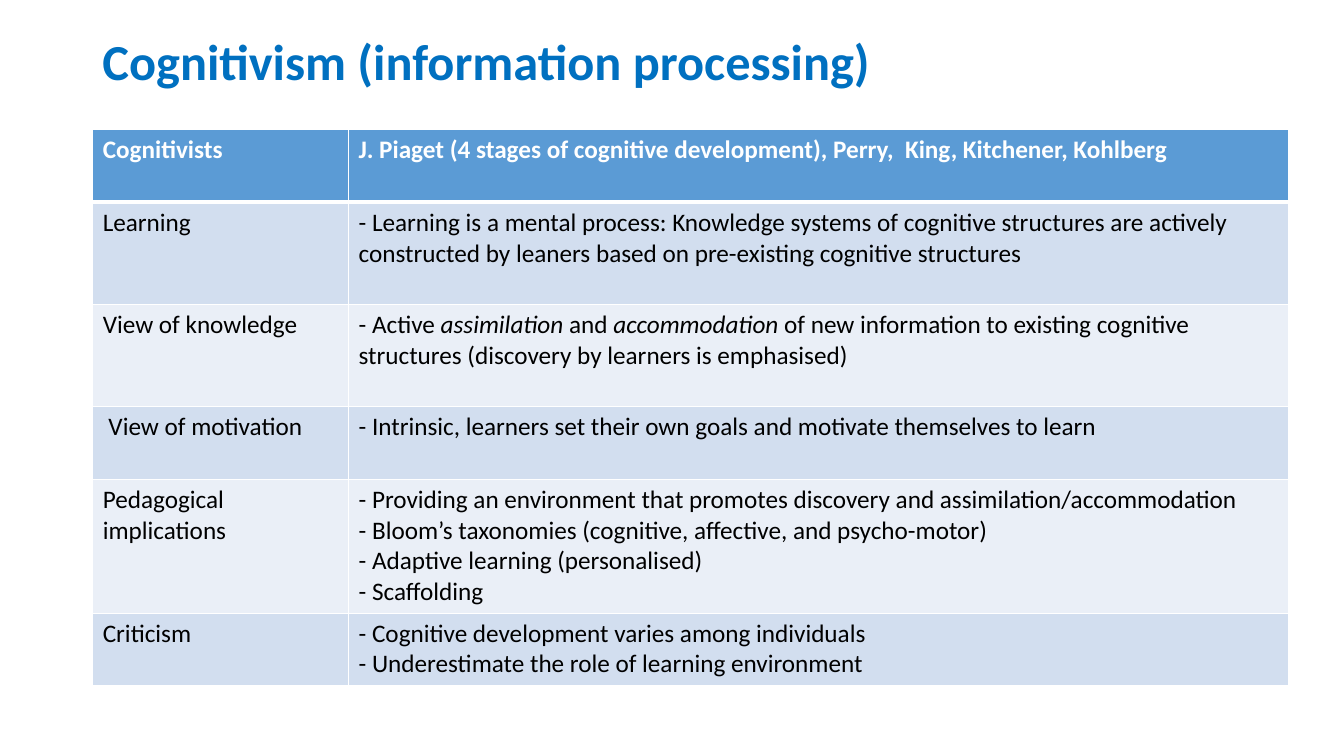
from lxml.etree import SubElement
from pptx import Presentation
from pptx.dml.color import RGBColor
from pptx.enum.text import MSO_ANCHOR as Anchor, PP_ALIGN as Align
from pptx.oxml.ns import qn
from pptx.util import Pt

TITLE_BLUE = RGBColor(0x00, 0x70, 0xC0)
HEADER_BLUE = RGBColor(0x5B, 0x9B, 0xD5)
BAND_DARK = RGBColor(0xD2, 0xDE, 0xEF)
BAND_LIGHT = RGBColor(0xEA, 0xEF, 0xF7)
WHITE = RGBColor(0xFF, 0xFF, 0xFF)
BLACK = RGBColor(0x00, 0x00, 0x00)
FONT = "Calibri"

COLUMN_SHARES = (0.214, 0.786)
HEADER_RULE, CELL_RULE = 3, 1

# Each row: height, label, paragraphs; a paragraph is a list of (text, italic) runs
ROWS = [
    (52, "Cognitivists", [
        [("J. Piaget (4 stages of cognitive development), Perry,  King, Kitchener, Kohlberg", False)]]),
    (73, "Learning", [
        [("- Learning is a mental process: Knowledge systems of cognitive structures are "
          "actively constructed by leaners based on pre-existing cognitive structures", False)]]),
    (73, "View of knowledge", [
        [("- Active ", False), ("assimilation", True), (" and ", False),
         ("accommodation ", True),
         ("of new information to existing cognitive structures "
          "(discovery by learners is emphasised)", False)]]),
    (52, " View of motivation", [
        [("- Intrinsic, learners set their own goals and motivate themselves to learn", False)]]),
    (95.5, "Pedagogical implications", [
        [("- Providing an environment that promotes discovery and assimilation/accommodation", False)],
        [("- Bloom’s taxonomies (cognitive, affective, and psycho-motor)", False)],
        [("- Adaptive learning (personalised)", False)],
        [("- Scaffolding", False)]]),
    (51.5, "Criticism", [
        [("- Cognitive development varies among individuals", False)],
        [("- Underestimate the role of learning environment", False)]]),
]


def add_run(paragraph, text, size, color, bold=False, italic=False):
    run = paragraph.add_run()
    run.text = text
    font = run.font
    font.name, font.size = FONT, Pt(size)
    font.bold, font.italic = bold, italic
    font.color.rgb = color


def set_borders(cell, top, bottom):
    properties = cell._tc.get_or_add_tcPr()
    widths = {"a:lnL": CELL_RULE, "a:lnR": CELL_RULE, "a:lnT": top, "a:lnB": bottom}
    for tag, width in widths.items():
        line = SubElement(properties, qn(tag), w=str(Pt(width)))
        fill = SubElement(line, qn("a:solidFill"))
        SubElement(fill, qn("a:srgbClr"), val=str(WHITE))


def fill_cell(cell, paragraphs, row_index):
    header = row_index == 0
    set_borders(cell,
                top=HEADER_RULE if row_index == 1 else CELL_RULE,
                bottom=HEADER_RULE if header else CELL_RULE)
    cell.fill.solid()
    band = BAND_DARK if row_index % 2 else BAND_LIGHT
    cell.fill.fore_color.rgb = HEADER_BLUE if header else band
    frame = cell.text_frame
    for index, runs in enumerate(paragraphs):
        paragraph = frame.add_paragraph() if index else frame.paragraphs[0]
        for text, italic in runs:
            add_run(paragraph, text, 18, WHITE if header else BLACK, header, italic)


def add_title(slide, left, top, width, height):
    title = slide.shapes.title
    title.left, title.top, title.width, title.height = map(Pt, (left, top, width, height))
    frame = title.text_frame
    frame.word_wrap = True
    frame.vertical_anchor = Anchor.MIDDLE
    paragraph = frame.paragraphs[0]
    paragraph.alignment = Align.LEFT
    paragraph.line_spacing = 0.9
    add_run(paragraph, "Cognitivism (information processing)", 36, TITLE_BLUE, bold=True)


def add_theory_table(slide, left, top, width):
    height = sum(row[0] for row in ROWS)
    frame = slide.shapes.add_table(len(ROWS), len(COLUMN_SHARES),
                                   Pt(left), Pt(top), Pt(width), Pt(height))
    table = frame.table
    for column, share in zip(table.columns, COLUMN_SHARES):
        column.width = Pt(width * share)
    for index, (row_height, label, paragraphs) in enumerate(ROWS):
        table.rows[index].height = Pt(row_height)
        fill_cell(table.cell(index, 0), [[(label, False)]], index)
        fill_cell(table.cell(index, 1), paragraphs, index)


def main():
    presentation = Presentation()
    presentation.slide_width, presentation.slide_height = Pt(960), Pt(540)
    slide = presentation.slides.add_slide(presentation.slide_layouts[5])

    # Heading
    add_title(slide, 66, 20, 828, 51)
    # Theory overview
    add_theory_table(slide, 66.25, 92.5, 854)

    presentation.save("out.pptx")


if __name__ == "__main__":
    main()
